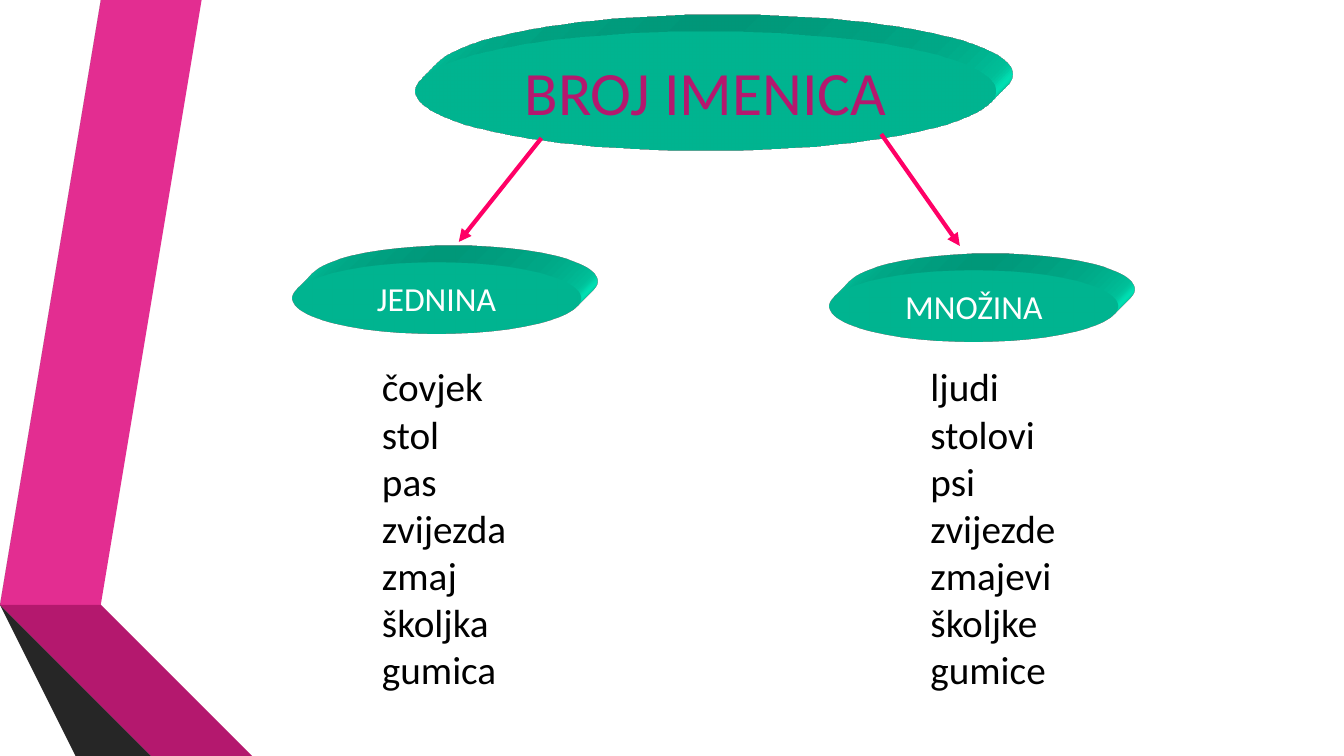
from lxml import etree
from pptx import Presentation
from pptx import util as u
from pptx.dml.color import RGBColor
from pptx.enum import shapes, text
from pptx.oxml import parse_xml
from pptx.oxml.ns import nsdecls, qn

WIDTH, HEIGHT = 13.33, 7.5
FONT = "Calibri"
COLOURS = {
    "pink": "E32D91", "magenta": "B4186E", "plum": "781049",
    "grey": "595959", "charcoal": "404040", "coal": "262626",
    "mint": "00FFCC", "arrow": "FF0066", "white": "FFFFFF", "black": "000000",
}

# Bent ribbons on the left edge: colour, corner points
RIBBONS = [
    ("pink", [(0.5, 5.78), (0.77, 5.83), (1.73, 0), (1.45, 0)]),
    ("grey", [(1.39, 0), (1.11, 0), (0.16, 5.73), (0.44, 5.77)]),
    ("coal", [(0.16, 5.73), (1.45, HEIGHT), (1.51, HEIGHT)]),
    ("plum", [(0.5, 5.79), (2.08, HEIGHT), (2.14, HEIGHT)]),
    ("magenta", [(0.5, 5.78), (2.14, HEIGHT), (2.83, HEIGHT), (0.77, 5.83)]),
    ("charcoal", [(0.16, 5.73), (1.51, HEIGHT), (2.02, HEIGHT),
                  (0.48, 5.83), (0.44, 5.77)]),
]

TITLE = {"words": "BROJ IMENICA", "box": (4.12, 0.31, 5.76, 1.18),
         "size": 44, "colour": "magenta"}
HEADING_SIZE = (2.86, 0.71)
LIST_TOP, LIST_SIZE = 3.55, (1.92, 3.4)
NUMBERS = [
    {"heading": "JEDNINA", "at": (2.9, 2.6), "list_left": 3.69,
     "arrow": (5.37, 1.37, 4.55, 2.4),
     "nouns": ["čovjek", "stol", "pas", "zvijezda", "zmaj", "školjka", "gumica"]},
    {"heading": "MNOŽINA", "at": (8.23, 2.68), "list_left": 9.13,
     "arrow": (8.74, 1.33, 9.52, 2.44),
     "nouns": ["ljudi", "stolovi", "psi", "zvijezde", "zmajevi", "školjke", "gumice"]},
]

SCENE = f"""<a:scene3d {nsdecls('a')}><a:camera prst="legacyObliqueTopRight"/>
<a:lightRig rig="legacyFlat3" dir="b"/></a:scene3d>"""
DEPTH = f"""<a:sp3d {nsdecls('a')} extrusionH="430200" prstMaterial="legacyMatte">
<a:bevelT w="13500" h="13500" prst="angle"/><a:bevelB w="13500" h="13500" prst="angle"/>
<a:extrusionClr><a:srgbClr val="{COLOURS['mint']}"/></a:extrusionClr></a:sp3d>"""


def rgb(name):
    return RGBColor.from_string(COLOURS[name])


def inches(values):
    return [u.Inches(value) for value in values]


def paint(shape, colour):
    shape.shadow.inherit = False
    shape.fill.solid()
    shape.fill.fore_color.rgb = rgb(colour)
    shape.line.fill.background()


def write(frame, lines, size, colour, align):
    frame.word_wrap = True
    for index, line in enumerate(lines):
        paragraph = frame.add_paragraph() if index else frame.paragraphs[0]
        paragraph.alignment = align
        run = paragraph.add_run()
        run.text = line
        run.font.color.rgb = rgb(colour)
        for key, value in {"name": FONT, "size": u.Pt(size)}.items():
            setattr(run.font, key, value)


def add_ribbon(slide, colour, corners):
    start, *rest = corners
    builder = slide.shapes.build_freeform(*start, scale=u.Inches(1))
    builder.add_line_segments(rest, close=True)
    paint(builder.convert_to_shape(), colour)


def add_disc(slide, words, box, size, colour):
    """Add an ellipse extruded towards the upper right."""
    disc = slide.shapes.add_shape(shapes.MSO_SHAPE.OVAL, *inches(box))
    paint(disc, "mint")
    for effect in (SCENE, DEPTH):
        disc._element.spPr.append(parse_xml(effect))
    disc.text_frame.vertical_anchor = text.MSO_ANCHOR.MIDDLE
    write(disc.text_frame, [words], size, colour, text.PP_ALIGN.CENTER)


def add_arrow(slide, ends):
    arrow = slide.shapes.add_connector(shapes.MSO_CONNECTOR.STRAIGHT, *inches(ends))
    arrow.line.color.rgb = rgb("arrow")
    arrow.line.width = u.Pt(3)
    etree.SubElement(arrow.line._get_or_add_ln(), qn("a:tailEnd"), type="triangle")
    etree.SubElement(arrow._element.spPr, qn("a:effectLst"))


def main():
    deck = Presentation()
    deck.slide_width, deck.slide_height = inches((WIDTH, HEIGHT))
    slide = deck.slides.add_slide(deck.slide_layouts[6])
    for colour, corners in RIBBONS:
        add_ribbon(slide, colour, corners)
    add_disc(slide, **TITLE)
    for number in NUMBERS:
        add_arrow(slide, number["arrow"])
        add_disc(slide, number["heading"], number["at"] + HEADING_SIZE, 24, "white")
        nouns = slide.shapes.add_textbox(
            *inches((number["list_left"], LIST_TOP) + LIST_SIZE))
        write(nouns.text_frame, number["nouns"], 28, "black", text.PP_ALIGN.LEFT)
    deck.save("out.pptx")


if __name__ == "__main__":
    main()
